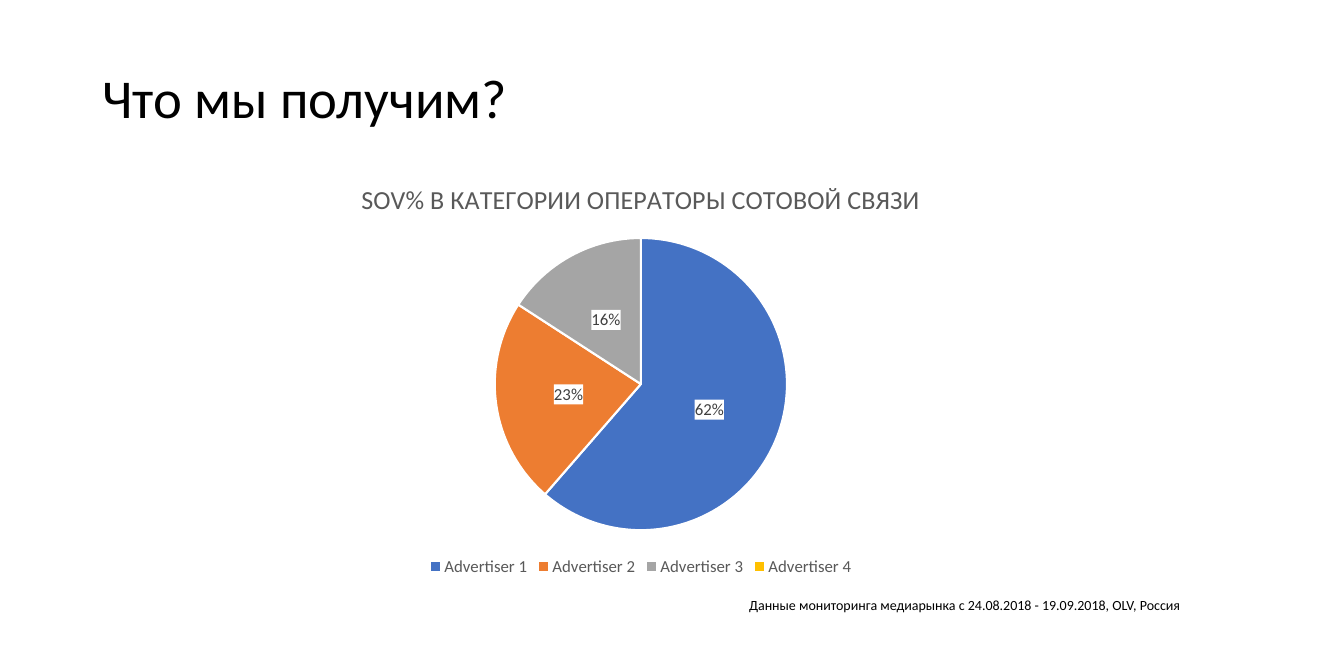
from lxml import etree
from pptx import Presentation
from pptx.chart.data import CategoryChartData
from pptx.dml.color import RGBColor
from pptx.enum.chart import XL_CHART_TYPE, XL_LABEL_POSITION, XL_LEGEND_POSITION
from pptx.enum.text import MSO_ANCHOR, MSO_AUTO_SIZE, PP_ALIGN
from pptx.oxml import parse_xml
from pptx.oxml.ns import nsdecls, qn
from pptx.util import Inches, Pt

PIE = XL_CHART_TYPE.PIE
BOTTOM = XL_LEGEND_POSITION.BOTTOM
CENTER = XL_LABEL_POSITION.CENTER
LEFT = PP_ALIGN.LEFT
MIDDLE, TOP = MSO_ANCHOR.MIDDLE, MSO_ANCHOR.TOP
FIXED, GROW = MSO_AUTO_SIZE.NONE, MSO_AUTO_SIZE.SHAPE_TO_FIT_TEXT

BLACK = RGBColor(0, 0, 0)
WHITE = RGBColor(255, 255, 255)
GRAY = RGBColor(0x59, 0x59, 0x59)
DARK = RGBColor(0x40, 0x40, 0x40)
SLICES = [RGBColor.from_string(c) for c in ("4472C4", "ED7D31", "A5A5A5", "FFC000")]

FONT = "Calibri"
UNIT = Inches(1) / 12  # one grid cell
COLS, ROWS = 160, 80
SHARES = (0.62, 0.23, 0.16, 0)
HEAD = "SOV% В КАТЕГОРИИ ОПЕРАТОРЫ СОТОВОЙ СВЯЗИ"


def grid(*cells):
    """Turn columns and rows into lengths."""
    return [round(n * UNIT) for n in cells]


def style(font, size, color):
    font.name, font.size, font.bold = FONT, Pt(size), False
    font.color.rgb = color


def write(frame, text, size=10, color=BLACK, anchor=TOP, fit=GROW, space=1.0):
    frame.text = text
    frame.word_wrap = True
    frame.auto_size = fit
    frame.vertical_anchor = anchor
    para = frame.paragraphs[0]
    para.alignment = LEFT
    para.line_spacing = space
    style(para.runs[0].font, size, color)


def add_title(slide, text):
    title = slide.shapes.title
    title.left, title.top, title.width, title.height = grid(11, 4.2, 138, 15.5)
    write(title.text_frame, text, size=39.1, anchor=MIDDLE, fit=FIXED, space=0.9)


def add_note(slide, text):
    box = slide.shapes.add_textbox(*grid(88, 70.4, 68, 3.25))
    write(box.text_frame, text)


def place_plot(chart, **shares):
    """Fix the pie's place inside the chart."""
    area = chart._chartSpace.find(".//" + qn("c:plotArea"))
    for old in area.findall(qn("c:layout")):
        area.remove(old)
    layout = etree.Element(qn("c:layout"))
    manual = etree.SubElement(layout, qn("c:manualLayout"))
    modes = {"layoutTarget": "inner", "xMode": "edge", "yMode": "edge"}
    for tag, val in {**modes, **shares}.items():
        etree.SubElement(manual, qn("c:" + tag)).set("val", str(val))
    area.insert(0, layout)


def add_labels(plot):
    plot.has_data_labels = True
    labels = plot.series[0].data_labels
    labels.show_value = True
    labels.show_percentage = False
    labels.number_format, labels.number_format_is_linked = "0%", False
    labels.position = CENTER
    style(labels.font, 12, DARK)
    # White plates, and no label on the empty slice
    node = labels._element
    node.find(qn("c:txPr")).addprevious(parse_xml(
        f'<c:spPr {nsdecls("c", "a")}><a:solidFill>'
        f'<a:srgbClr val="{WHITE}"/></a:solidFill></c:spPr>'))
    node.insert(0, parse_xml(
        f'<c:dLbl {nsdecls("c")}><c:idx val="{SHARES.index(0)}"/>'
        '<c:delete val="1"/></c:dLbl>'))


def add_pie(slide):
    data = CategoryChartData(number_format="0%")
    data.categories = [f"Advertiser {n + 1}" for n in range(len(SHARES))]
    data.add_series(HEAD, SHARES)
    chart = slide.shapes.add_chart(PIE, *grid(32.3, 19.4, 88, 49.7), data).chart
    style(chart.font, 10, BLACK)

    # Heading and legend
    chart.has_title = True
    chart.chart_title.include_in_layout = False
    frame = chart.chart_title.text_frame
    frame.text = HEAD
    style(frame.paragraphs[0].runs[0].font, 18.6, GRAY)
    chart.has_legend = True
    chart.legend.position = BOTTOM
    chart.legend.include_in_layout = False
    style(chart.legend.font, 12, GRAY)

    # Slices
    plot = chart.plots[0]
    plot.vary_by_categories = True
    for n, color in enumerate(SLICES):
        form = plot.series[0].points[n].format
        form.fill.solid()
        form.fill.fore_color.rgb = color
        form.line.color.rgb = WHITE
        form.line.width = Pt(1.5)
    add_labels(plot)
    place_plot(chart, x=0.3, y=0.18, w=0.4, h=0.7)


def main():
    deck = Presentation()
    deck.slide_width, deck.slide_height = grid(COLS, ROWS)
    slide = deck.slides.add_slide(deck.slide_layouts[5])
    add_title(slide, "Что мы получим?")
    add_pie(slide)
    add_note(slide, "Данные мониторинга медиарынка с 24.08.2018 - 19.09.2018, OLV, Россия")
    deck.save("out.pptx")


if __name__ == "__main__":
    main()
